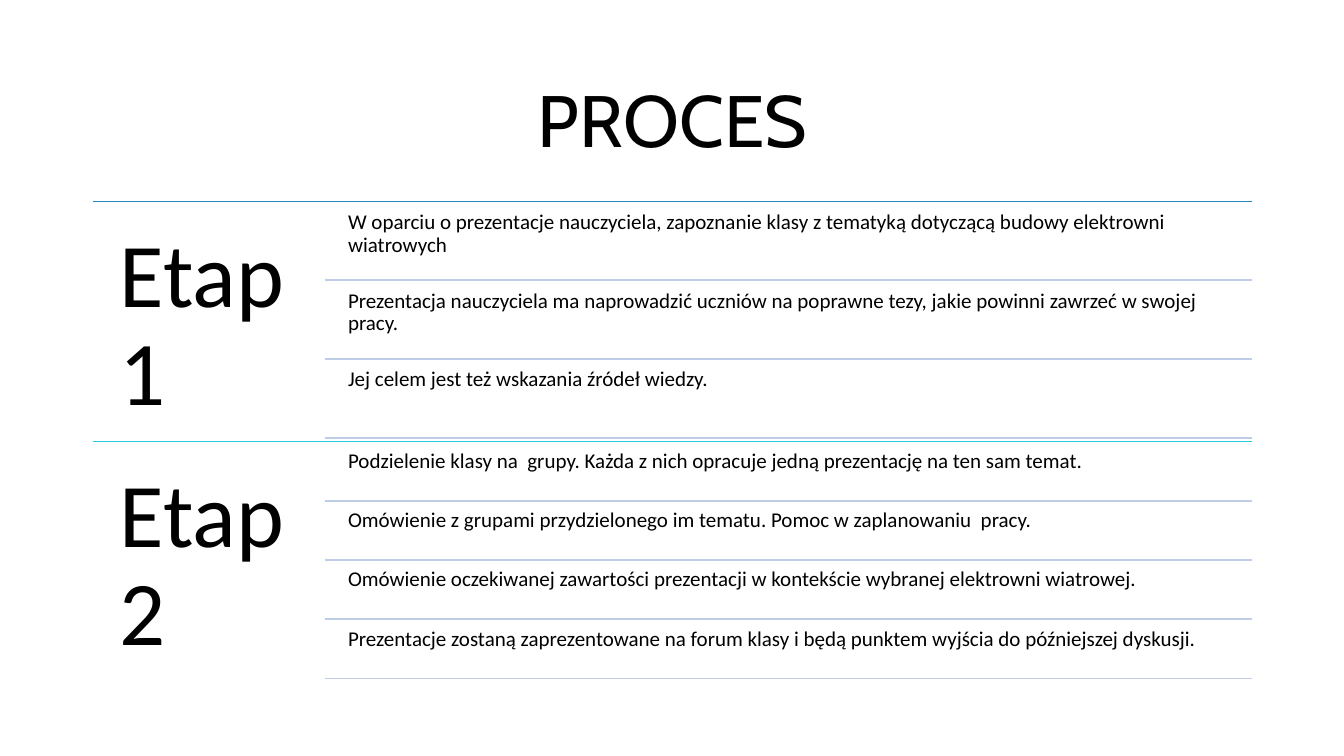
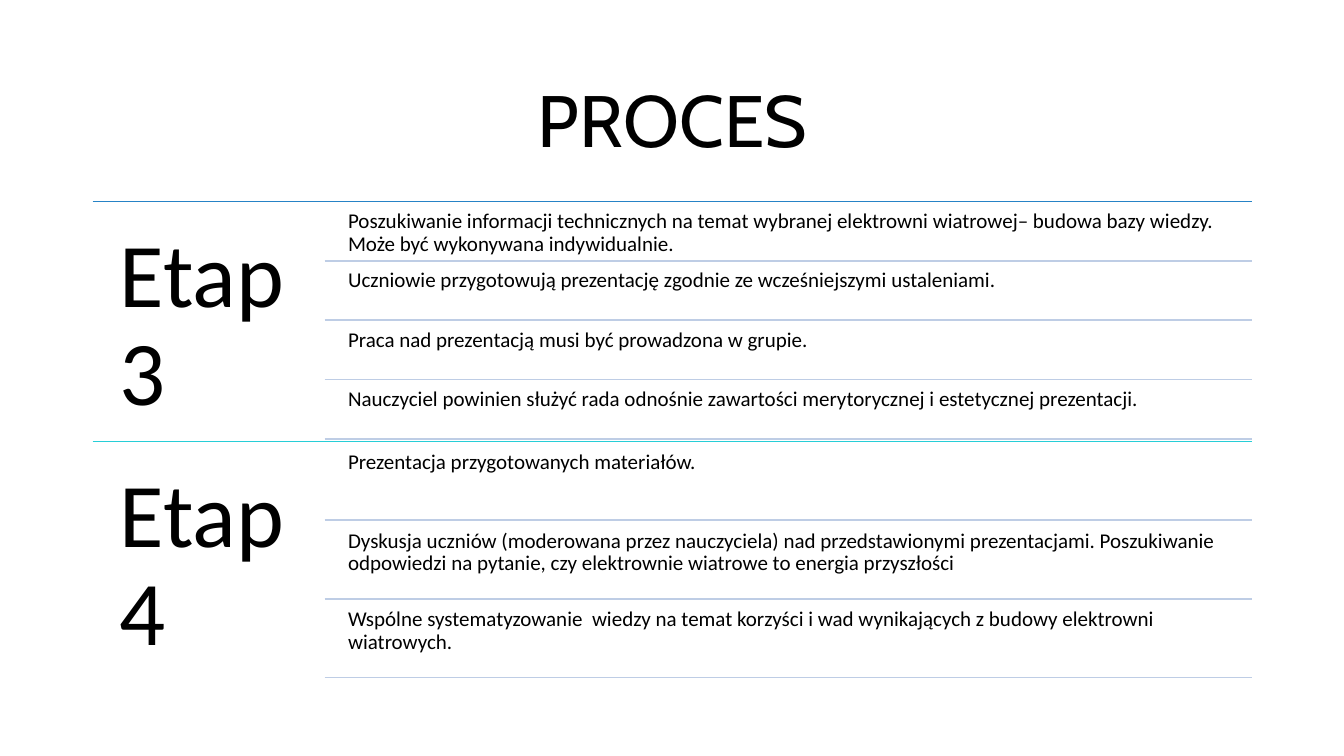
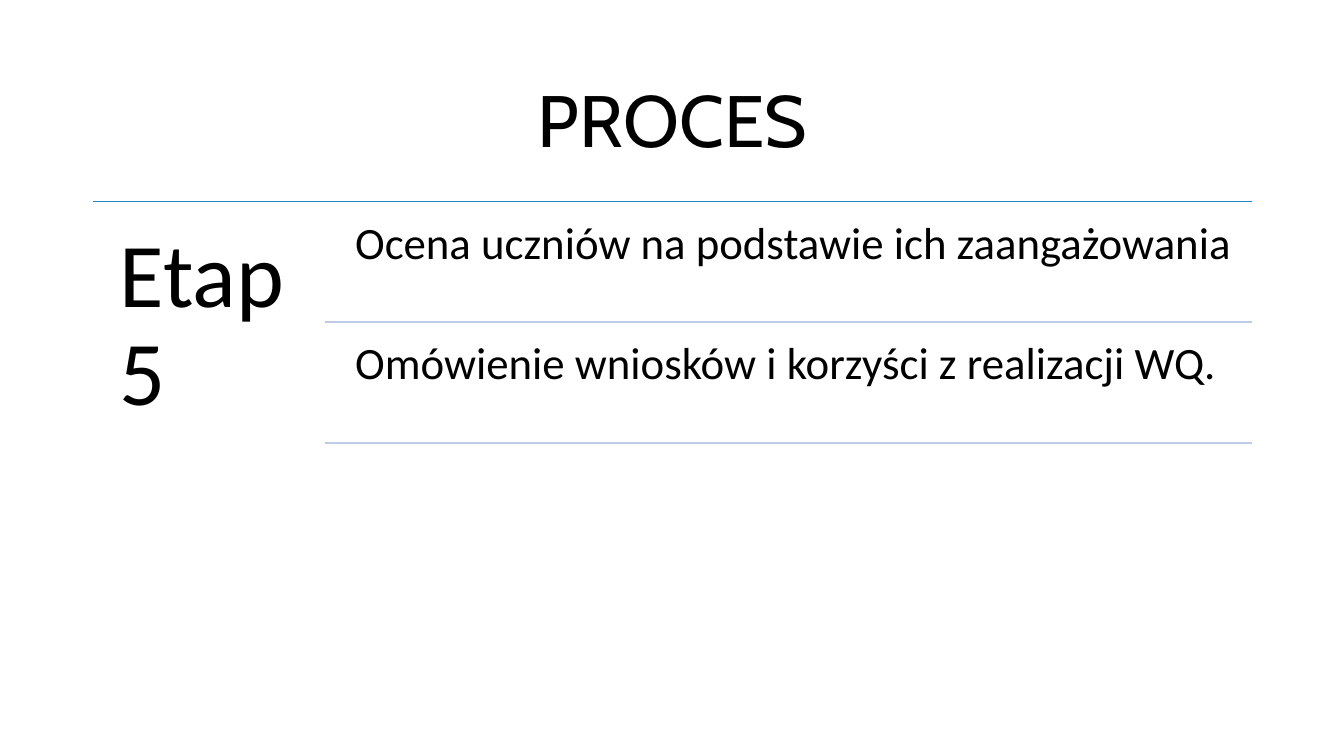
from lxml import etree
from pptx import Presentation
from pptx.dml.color import RGBColor
from pptx.enum.shapes import MSO_CONNECTOR
from pptx.enum.text import MSO_ANCHOR, MSO_AUTO_SIZE, PP_ALIGN
from pptx.oxml.ns import qn
from pptx.util import Inches, Pt

STRAIGHT = MSO_CONNECTOR.STRAIGHT
TOP, MIDDLE = MSO_ANCHOR.TOP, MSO_ANCHOR.MIDDLE
LEFT, CENTER = PP_ALIGN.LEFT, PP_ALIGN.CENTER
NO_FIT = MSO_AUTO_SIZE.NONE
TITLE_ONLY = 5


def color(value):
    return RGBColor.from_string(value)


def write(tf, text, font="Calibri", size=15, fill="000000", inset=0.06,
          align=LEFT, anchor=TOP, after=0.35):
    tf.word_wrap = True
    tf.auto_size = NO_FIT
    tf.vertical_anchor = anchor
    tf.margin_left = tf.margin_right = Inches(inset)
    tf.margin_top = tf.margin_bottom = Inches(inset)
    p = tf.paragraphs[0]
    p.alignment = align
    p.line_spacing = 0.9
    p.space_before = Pt(0)
    p.space_after = Pt(size * after)
    r = p.add_run()
    r.text = text
    r.font.name = font
    r.font.size = Pt(size)
    r.font.color.rgb = color(fill)


class Deck:
    LEFT_EDGE, WIDTH = 0.92, 11.5
    STAGES_TOP = 2
    LABEL_SHARE, ITEM_SHARE = 0.2, 0.215
    GAP_SHARE = 0.05
    STAGE_LINES = ("2683C6", "27CED7")
    ITEM_LINE = "BECDE5"

    def __init__(self):
        self.prs = Presentation()
        self.prs.slide_width = Inches(13.33)
        self.prs.slide_height = Inches(7.5)
        self.slide = None

    def x(self, share):
        return Inches(self.LEFT_EDGE + self.WIDTH * share)

    def add_slide(self, title):
        layout = self.prs.slide_layouts[TITLE_ONLY]
        self.slide = self.prs.slides.add_slide(layout)
        sp = self.slide.shapes.title
        sp.left, sp.top = self.x(0), Inches(0.61)
        sp.width, sp.height = Inches(self.WIDTH), Inches(1.24)
        write(sp.text_frame, title, font="Cabin", size=52, inset=0.05,
              align=CENTER, anchor=MIDDLE, after=0.12)

    def rule(self, start, y, fill):
        line = self.slide.shapes.add_connector(
            STRAIGHT, self.x(start), Inches(y), self.x(1), Inches(y))
        line.line.color.rgb = color(fill)
        line.line.width = Pt(1.25)
        etree.SubElement(line._element.spPr, qn("a:effectLst"))

    def text(self, start, end, top, height, text, **style):
        sp = self.slide.shapes.add_textbox(
            self.x(start), Inches(top), self.x(end) - self.x(start), Inches(height))
        write(sp.text_frame, text, **style)

    def stage(self, label, items, top, height, fill, **style):
        self.rule(0, top, fill)
        self.text(0, self.LABEL_SHARE, top, height, label, size=65, inset=0.27)
        count = len(items)
        row = height / (count + self.GAP_SHARE * (count + 1))
        gap = row * self.GAP_SHARE
        for i, item in enumerate(items):
            y = top + gap + i * (row + gap)
            self.text(self.ITEM_SHARE, 1, y, row, item, **style)
            self.rule(self.LABEL_SHARE, y + row, self.ITEM_LINE)

    def process(self, stages, height=2.38, **style):
        self.add_slide("PROCES")
        for i, (label, items) in enumerate(stages):
            self.stage(label, items, self.STAGES_TOP + i * height, height,
                       self.STAGE_LINES[i], **style)


def main():
    deck = Deck()
    deck.process([
        ("Etap 1", [
            "W oparciu o prezentacje nauczyciela, zapoznanie klasy z tematyką dotyczącą budowy elektrowni wiatrowych",
            "Prezentacja nauczyciela ma naprowadzić uczniów na poprawne tezy, jakie powinni zawrzeć w swojej pracy.",
            "Jej celem jest też wskazania źródeł wiedzy.",
        ]),
        ("Etap 2", [
            "Podzielenie klasy na  grupy. Każda z nich opracuje jedną prezentację na ten sam temat.",
            "Omówienie z grupami przydzielonego im tematu. Pomoc w zaplanowaniu  pracy.",
            "Omówienie oczekiwanej zawartości prezentacji w kontekście wybranej elektrowni wiatrowej.",
            "Prezentacje zostaną zaprezentowane na forum klasy i będą punktem wyjścia do późniejszej dyskusji.",
        ]),
    ])
    deck.process([
        ("Etap 3", [
            "Poszukiwanie informacji technicznych na temat wybranej elektrowni wiatrowej– budowa bazy wiedzy. Może być wykonywana indywidualnie.",
            "Uczniowie przygotowują prezentację zgodnie ze wcześniejszymi ustaleniami.",
            "Praca nad prezentacją musi być prowadzona w grupie.",
            "Nauczyciel powinien służyć rada odnośnie zawartości merytorycznej i estetycznej prezentacji.",
        ]),
        ("Etap 4", [
            "Prezentacja przygotowanych materiałów.",
            "Dyskusja uczniów (moderowana przez nauczyciela) nad przedstawionymi prezentacjami. Poszukiwanie odpowiedzi na pytanie, czy elektrownie wiatrowe to energia przyszłości",
            "Wspólne systematyzowanie  wiedzy na temat korzyści i wad wynikających z budowy elektrowni wiatrowych.",
        ]),
    ])
    deck.process([
        ("Etap 5", [
            "Ocena uczniów na podstawie ich zaangażowania",
            "Omówienie wniosków i korzyści z realizacji WQ.",
        ]),
    ], height=2.45, size=32, inset=0.13)
    deck.prs.save("out.pptx")


if __name__ == "__main__":
    main()
